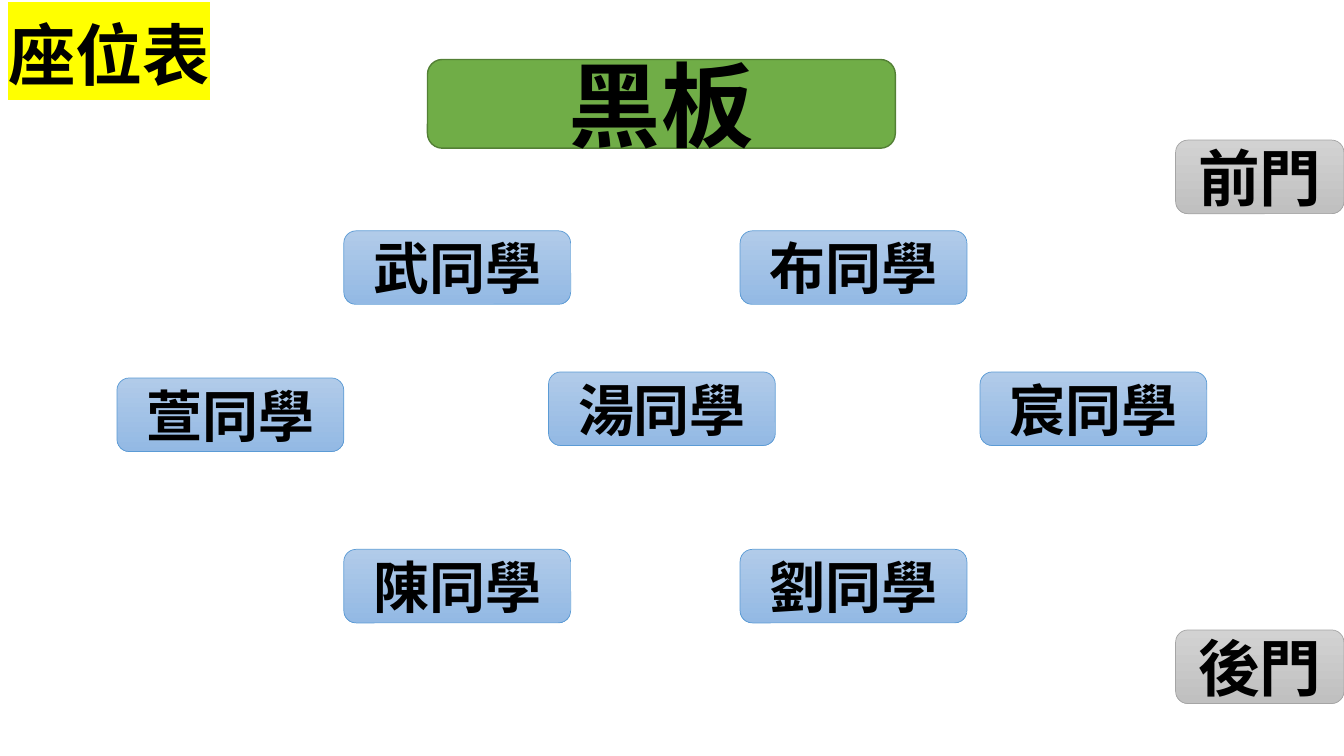
from lxml import etree
from pptx import Presentation
from pptx.dml.color import RGBColor
from pptx.enum.shapes import MSO_SHAPE
from pptx.enum.text import MSO_ANCHOR, MSO_AUTO_SIZE, PP_ALIGN
from pptx.oxml.ns import qn
from pptx.util import Inches, Pt

ROUNDED = MSO_SHAPE.ROUNDED_RECTANGLE
MIDDLE = MSO_ANCHOR.MIDDLE
LEFT, CENTER = PP_ALIGN.LEFT, PP_ALIGN.CENTER
FONT = "Noto Sans CJK SC"
rgb = RGBColor.from_string


def write(shape, text, size, align):
    """Put one bold black line into the shape and return its run properties."""
    frame = shape.text_frame
    frame.text = text
    frame.word_wrap = True
    frame.vertical_anchor = MIDDLE
    para = frame.paragraphs[0]
    para.alignment = align
    font = para.runs[0].font
    font.size, font.bold, font.name = Pt(size), True, FONT
    font.color.rgb = rgb("000000")
    properties = para.runs[0]._r.get_or_add_rPr()
    etree.SubElement(properties, qn("a:ea"), typeface=FONT)
    return properties


def add_block(text, left, top, width, height, size, fills, line, line_width):
    """Add a rounded block; two fill colours make a gradient from top to bottom."""
    block = page.shapes.add_shape(
        ROUNDED, Inches(left), Inches(top), Inches(width), Inches(height))
    block.shadow.inherit = False
    if len(fills) == 1:
        block.fill.solid()
        block.fill.fore_color.rgb = rgb(fills[0])
    else:
        block.fill.gradient()
        block.fill.gradient_angle = 270
        for stop, color in zip(block.fill.gradient_stops, fills):
            stop.color.rgb = rgb(color)
    block.line.color.rgb = rgb(line)
    block.line.width = Pt(line_width)
    write(block, text, size, CENTER)


deck = Presentation()
deck.slide_width, deck.slide_height = Inches(13.33), Inches(7.5)
page = deck.slides.add_slide(deck.slide_layouts[5])

# Title with yellow highlight
title = page.shapes.title
title.left, title.top = Inches(-0.02), Inches(0)
title.width, title.height = Inches(2.35), Inches(1.16)
properties = write(title, "座位表", 48, LEFT)
title.text_frame.auto_size = MSO_AUTO_SIZE.NONE
title.text_frame.paragraphs[0].line_spacing = 0.9
highlight = etree.Element(qn("a:highlight"))
etree.SubElement(highlight, qn("a:srgbClr"), val="FFFF00")
properties.find(qn("a:solidFill")).addnext(highlight)

# Blackboard
add_block("黑板", 4.24, 0.59, 4.64, 0.88, 66, ["70AD47"], "538035", 1)

# Doors along the right wall
for name, top in [("前門", 1.39), ("後門", 6.25)]:
    add_block(name, 11.66, top, 1.67, 0.73, 44, ["D2D2D2", "C0C0C0"], "A5A5A5", 0.5)

# Seats: two in front, three in the middle, two at the back
PAIR = [3.41, 7.34]
TRIO = [1.16, 5.44, 9.72]
seat_rows = [
    ("武布", PAIR, [2.29, 2.29]),
    ("萱湯宸", TRIO, [3.75, 3.69, 3.69]),
    ("陳劉", PAIR, [5.45, 5.45]),
]
for surnames, lefts, tops in seat_rows:
    for surname, left, top in zip(surnames, lefts, tops):
        add_block(surname + "同學", left, top, 2.25, 0.73, 40,
                  ["B1CBE9", "93B9E4"], "5B9BD5", 0.5)

deck.save("out.pptx")
